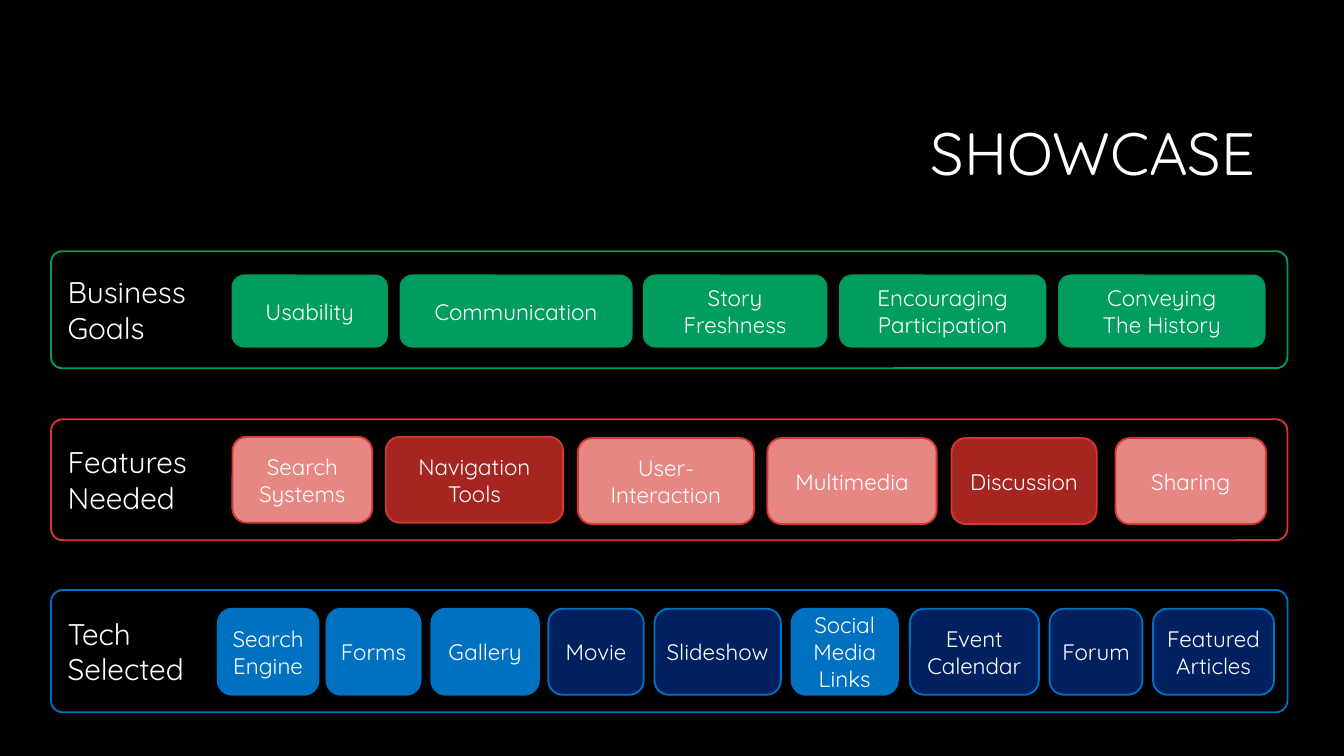
from typing import NamedTuple

from pptx import Presentation
from pptx.dml.color import RGBColor
from pptx.enum.shapes import MSO_SHAPE as Shape
from pptx.enum.text import MSO_ANCHOR as Anchor, PP_ALIGN as Align
from pptx.util import Inches, Pt

FONT = "Quicksand"
BLACK = RGBColor(0x00, 0x00, 0x00)
WHITE = RGBColor(0xFF, 0xFF, 0xFF)
GREEN = RGBColor(0x01, 0x9D, 0x5E)
GREEN_EDGE = RGBColor(0x01, 0x9B, 0x5C)
RED = RGBColor(0xD6, 0x37, 0x31)
PINK = RGBColor(0xE6, 0x87, 0x83)
DARK_RED = RGBColor(0xA5, 0x26, 0x21)
BLUE = RGBColor(0x00, 0x70, 0xC0)
NAVY = RGBColor(0x00, 0x20, 0x60)

SLIDE_WIDTH = Inches(10)
SLIDE_HEIGHT = SLIDE_WIDTH * 9 // 16
BAND_LEFT, BAND_WIDTH = 0.38, 9.2
BAND_CORNER, CARD_CORNER = 0.096, 0.167


class Card(NamedTuple):
    label: str
    left: float
    width: float
    fill: RGBColor
    lift: float = 0


class Band(NamedTuple):
    heading: str
    top: float
    height: float
    edge: RGBColor
    card_top: float
    card_height: float
    card_inset: float
    cards: list[Card]


BANDS = [
    Band("Business\nGoals", 1.87, 0.87, GREEN_EDGE, 2.05, 0.53, 0.1, [
        Card("Usability", 1.73, 1.15, GREEN),
        Card("Communication", 2.98, 1.72, GREEN),
        Card("Story\nFreshness", 4.79, 1.36, GREEN),
        Card("Encouraging Participation", 6.25, 1.53, GREEN),
        Card("Conveying\nThe History", 7.88, 1.53, GREEN),
    ]),
    Band("Features\nNeeded", 3.12, 0.9, RED, 3.26, 0.64, 0.1, [
        Card("Search\nSystems", 1.73, 1.04, PINK, lift=0.01),
        Card("Navigation\nTools", 2.87, 1.32, DARK_RED, lift=0.01),
        Card("User-Interaction", 4.3, 1.31, PINK),
        Card("Multimedia", 5.71, 1.26, PINK),
        Card("Discussion", 7.08, 1.08, DARK_RED),
        Card("Sharing", 8.3, 1.12, PINK),
    ]),
    Band("Tech\nSelected", 4.39, 0.91, BLUE, 4.53, 0.64, 0, [
        Card("Search Engine", 1.62, 0.75, BLUE),
        Card("Forms", 2.43, 0.7, BLUE),
        Card("Gallery", 3.21, 0.8, BLUE),
        Card("Movie", 4.08, 0.71, NAVY),
        Card("Slideshow", 4.87, 0.94, NAVY),
        Card("Social Media\nLinks", 5.89, 0.79, BLUE),
        Card("Event\nCalendar", 6.77, 0.96, NAVY),
        Card("Forum", 7.81, 0.69, NAVY),
        Card("Featured\nArticles", 8.58, 0.9, NAVY),
    ]),
]


def write(shape, text: str, size: float, align: Align, inset: float = 0.1) -> None:
    """Fill a shape with vertically centred white text, one paragraph a line."""
    frame = shape.text_frame
    frame.word_wrap = True
    frame.vertical_anchor = Anchor.MIDDLE
    frame.margin_left = frame.margin_right = Inches(inset)
    frame.margin_top = frame.margin_bottom = Inches(0.05)
    frame.text = text
    for paragraph in frame.paragraphs:
        paragraph.alignment = align
        paragraph.font.name = FONT
        paragraph.font.size = Pt(size)
        paragraph.font.color.rgb = WHITE


def add_rounded(slide, left: float, top: float, width: float, height: float,
                corner: float, edge: RGBColor, fill: RGBColor | None = None):
    box = slide.shapes.add_shape(Shape.ROUNDED_RECTANGLE, Inches(left), Inches(top),
                                 Inches(width), Inches(height))
    box.adjustments[0] = corner
    box.shadow.inherit = False
    box.line.color.rgb = edge
    box.line.width = Pt(1)
    if fill is None:
        box.fill.background()
    else:
        box.fill.solid()
        box.fill.fore_color.rgb = fill
    return box


def add_band(slide, band: Band) -> None:
    outline = add_rounded(slide, BAND_LEFT, band.top, BAND_WIDTH, band.height,
                          BAND_CORNER, band.edge)
    write(outline, band.heading, 16, Align.LEFT)
    for card in band.cards:
        box = add_rounded(slide, card.left, band.card_top - card.lift, card.width,
                          band.card_height, CARD_CORNER, band.edge, card.fill)
        write(box, card.label, 12, Align.CENTER, band.card_inset)


def main() -> None:
    deck = Presentation()
    deck.slide_width, deck.slide_height = SLIDE_WIDTH, SLIDE_HEIGHT
    slide = deck.slides.add_slide(deck.slide_layouts[6])
    slide.background.fill.solid()
    slide.background.fill.fore_color.rgb = BLACK

    title = slide.shapes.add_textbox(Inches(2.38), Inches(0.63), Inches(7.06), Inches(1.06))
    write(title, "SHOWCASE", 32, Align.RIGHT)
    title.text_frame.paragraphs[0].line_spacing = 0.9

    for band in BANDS:
        add_band(slide, band)
    deck.save("out.pptx")


if __name__ == "__main__":
    main()
